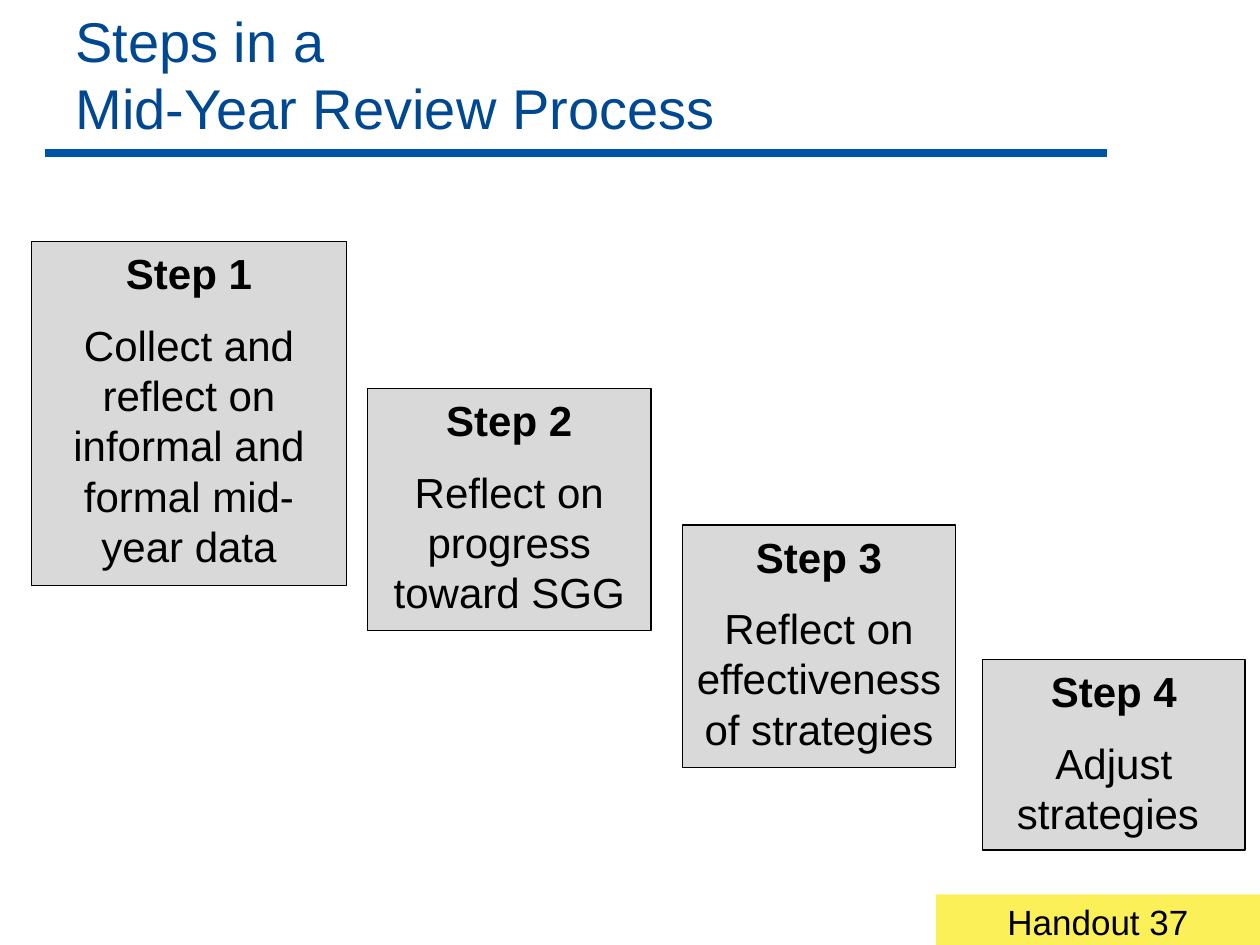
from lxml import etree
from pptx import Presentation
from pptx import util as u
from pptx.dml.color import RGBColor
from pptx.enum import shapes, text
from pptx.oxml import ns

COLORS = {
    "rule": "0054A8",
    "title": "004992",
    "step": "D9D9D9",
    "ink": "000000",
    "handout": "FCF059",
}


def rgb(name):
    return RGBColor.from_string(COLORS[name])


class SlideBuilder:
    font = "Arial"

    def __init__(self, slide):
        self.slide = slide

    def add_run(self, paragraph, words, size, color="ink", bold=False):
        run = paragraph.add_run()
        run.text = words
        run.font.name = self.font
        run.font.size = u.Pt(size)
        run.font.bold = bold
        run.font.color.rgb = rgb(color)

    def title(self, lines, left, top, width, height):
        heading = self.slide.shapes.add_textbox(
            u.Pt(left), u.Pt(top), u.Pt(width), u.Pt(height))
        frame = heading.text_frame
        frame.word_wrap = True
        frame.vertical_anchor = text.MSO_ANCHOR.BOTTOM
        paragraph = frame.paragraphs[0]
        for index, line in enumerate(lines):
            if index:
                paragraph.add_line_break()
            self.add_run(paragraph, line, 32, "title")

    def rule(self, left, right, y):
        line = self.slide.shapes.add_connector(
            shapes.MSO_CONNECTOR.STRAIGHT, u.Pt(left), u.Pt(y), u.Pt(right), u.Pt(y))
        line.line.color.rgb = rgb("rule")
        line.line.width = u.Pt(4.5)
        etree.SubElement(line._element.spPr, ns.qn("a:effectLst"))

    def box(self, bounds, fill, paragraphs, size, outlined=True):
        """Draw a filled box holding centred (words, bold) paragraphs."""
        panel = self.slide.shapes.add_shape(
            shapes.MSO_SHAPE.RECTANGLE, *(u.Pt(length) for length in bounds))
        panel.shadow.inherit = False
        panel.fill.solid()
        panel.fill.fore_color.rgb = rgb(fill)
        if outlined:
            panel.line.color.rgb = rgb("ink")
            panel.line.width = u.Pt(0.75)
        else:
            panel.line.fill.background()
        frame = panel.text_frame
        frame.word_wrap = True
        frame.auto_size = text.MSO_AUTO_SIZE.SHAPE_TO_FIT_TEXT
        frame.vertical_anchor = text.MSO_ANCHOR.TOP
        for index, (words, bold) in enumerate(paragraphs):
            paragraph = frame.add_paragraph() if index else frame.paragraphs[0]
            paragraph.alignment = text.PP_ALIGN.CENTER
            if index:
                paragraph.space_before = u.Pt(size / 2)
            self.add_run(paragraph, words, size, bold=bold)


def main():
    deck = Presentation()
    deck.slide_width, deck.slide_height = u.Pt(720), u.Pt(540)
    builder = SlideBuilder(deck.slides.add_slide(deck.slide_layouts[6]))

    # Heading and rule
    builder.rule(26, 632.5, 87.4)
    builder.title(["Steps in a", "Mid-Year Review Process"], 36, 0, 684, 84)

    # Descending steps
    steps = [
        ((18, 138, 180, 196.5), "Collect and reflect on informal and formal mid-year data"),
        ((210, 222, 162, 138.5), "Reflect on progress toward SGG"),
        ((390, 300, 156, 138.5), "Reflect on effectiveness of strategies"),
        ((561.5, 376.8, 150, 109), "Adjust strategies "),
    ]
    for number, (bounds, action) in enumerate(steps, 1):
        builder.box(bounds, "step", [(f"Step {number}", True), (action, False)], 24)

    # Handout tag
    builder.box((534.8, 511, 185.2, 31.5), "handout", [("Handout 37", False)], 20,
                outlined=False)

    deck.save("out.pptx")


if __name__ == "__main__":
    main()
